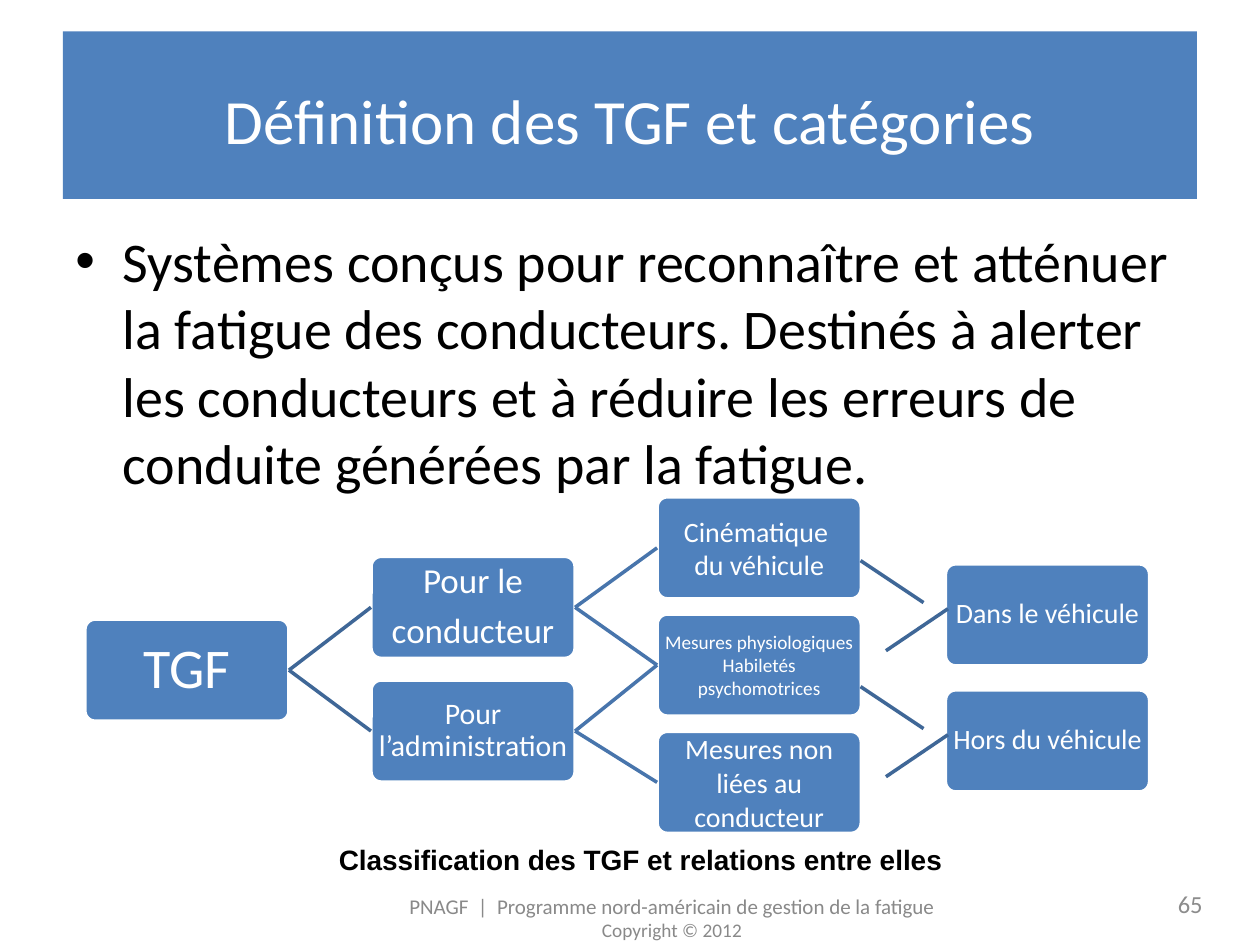
from copy import deepcopy

from lxml import etree
from pptx import Presentation
from pptx.dml.color import RGBColor
from pptx.enum.shapes import MSO_CONNECTOR as Connector, MSO_SHAPE as Preset
from pptx.enum.text import MSO_ANCHOR as Anchor, PP_ALIGN as Align
from pptx.oxml.ns import qn
from pptx.util import Pt

COLORS = {
    "blue": "4F81BD", "dark_link": "3F6797", "link": "4875AC", "white": "FFFFFF",
    "black": "000000", "footer": "898989", "number": "8C8C8C",
}
RIGHT_SIDE, LEFT_SIDE = 3, 1
BOX_WIDTH, BOX_HEIGHT = 116.64, 58.32


def rgb(name):
    return RGBColor.from_string(COLORS[name])


def write(paragraph, text, size, color, font="Calibri", bold=False, align=Align.CENTER):
    """Fill a paragraph; each newline becomes a line break of the same size."""
    paragraph.alignment = align
    for index, line in enumerate(text.split("\n")):
        if index:
            paragraph.add_line_break()
            paragraph._p[-1].append(deepcopy(run._r.rPr))
        run = paragraph.add_run()
        run.text = line
        run.font.name = font
        run.font.size = Pt(size)
        run.font.bold = bold
        run.font.color.rgb = rgb(color)


def add_text_box(slide, box, anchor=Anchor.MIDDLE, wrap=True):
    frame = slide.shapes.add_textbox(*map(Pt, box)).text_frame
    frame.word_wrap = wrap
    frame.vertical_anchor = anchor
    return frame


def add_title(slide, box):
    left, top, width, height = box
    banner = slide.shapes.add_shape(Preset.RECTANGLE, *map(Pt, box))
    banner.shadow.inherit = False
    banner.fill.solid()
    banner.fill.fore_color.rgb = rgb("blue")
    banner.line.fill.background()
    frame = add_text_box(slide, (left, top + 3.6, width, height - 5.76))
    paragraph = frame.paragraphs[0]
    paragraph.line_spacing = Pt(45.8)
    write(paragraph, "Définition des TGF et catégories", 36, "white")


def add_body(slide, box):
    paragraph = add_text_box(slide, box, Anchor.TOP).paragraphs[0]
    paragraph.space_before = Pt(2)
    write(paragraph, "Systèmes conçus pour reconnaître et atténuer\n"
          "la fatigue des conducteurs. Destinés à alerter les conducteurs et à "
          "réduire les erreurs de conduite générées par la fatigue.",
          32, "black", align=Align.LEFT)
    # Hanging bullet
    properties = paragraph._p.get_or_add_pPr()
    properties.set("marL", str(Pt(27)))
    properties.set("indent", str(-Pt(27)))
    etree.SubElement(properties, qn("a:buFont")).set("typeface", "Arial")
    etree.SubElement(properties, qn("a:buChar")).set("char", "•")


def add_node(slide, left, top, lines, size, spacing=0.9):
    node = slide.shapes.add_shape(
        Preset.ROUNDED_RECTANGLE, Pt(left), Pt(top), Pt(BOX_WIDTH), Pt(BOX_HEIGHT))
    node.adjustments[0] = 0.1
    node.shadow.inherit = False
    node.fill.solid()
    node.fill.fore_color.rgb = rgb("blue")
    node.line.color.rgb = rgb("white")
    node.line.width = Pt(2)
    frame = node.text_frame
    frame.word_wrap = True
    frame.vertical_anchor = Anchor.MIDDLE
    frame.margin_left = frame.margin_right = 0
    frame.margin_top = frame.margin_bottom = Pt(0.72)
    for index, line in enumerate(lines):
        paragraph = frame.add_paragraph() if index else frame.paragraphs[0]
        paragraph.line_spacing = spacing
        if spacing < 1 and index < len(lines) - 1:
            paragraph.space_after = Pt(0.35 * size)
        write(paragraph, line, size, "white")
    return node


def add_line(slide, color, start=(0, 0), end=(0, 0)):
    line = slide.shapes.add_connector(Connector.STRAIGHT, *map(Pt, (*start, *end)))
    line.line.color.rgb = rgb(color)
    line.line.width = Pt(2)
    etree.SubElement(line._element.spPr, qn("a:effectLst"))
    return line


def link(slide, parent, child, color):
    line = add_line(slide, color)
    line.begin_connect(parent, RIGHT_SIDE)
    line.end_connect(child, LEFT_SIDE)


def add_diagram(slide, left, top):
    columns = [left + offset for offset in (0, 163.5, 327, 491.75)]

    # Boxes, column by column
    root = add_node(slide, columns[0], top + 69.9, ["TGF"], 32)
    driver = add_node(slide, columns[1], top + 34, ["Pour le", "conducteur"], 20)
    office = add_node(slide, columns[1], top + 104.7, ["Pour l’administration"], 17)
    measures = [
        (["Cinématique \ndu véhicule"], 16),
        (["Mesures physiologiques Habiletés psychomotrices"], 11),
        (["Mesures non", "liées au conducteur"], 16),
    ]
    kinematics, physiology, unrelated = [
        add_node(slide, columns[2], top + 67 * row, lines, size, 1.0)
        for row, (lines, size) in enumerate(measures)]
    for row, label in enumerate(("Dans le véhicule", "Hors du véhicule")):
        box_top = top + 38.3 + 72 * row
        add_node(slide, columns[3], box_top, [label], 16)
        # Short loose lines between the last two columns
        middle = box_top + BOX_HEIGHT / 2
        edge = columns[3]
        add_line(slide, "dark_link", (edge - 48.5, middle - 31), (edge - 12.5, middle - 7))
        add_line(slide, "dark_link", (edge + 1.5, middle - 3.5), (edge - 34, middle + 20.5))

    # Tree links
    for child in (driver, office):
        link(slide, root, child, "dark_link")
    for parent, child in ((driver, kinematics), (driver, physiology),
                          (office, physiology), (office, unrelated)):
        link(slide, parent, child, "link")


def add_caption(slide, box):
    frame = add_text_box(slide, box, Anchor.TOP, wrap=False)
    write(frame.paragraphs[0], "Classification des TGF et relations entre elles",
          16, "black", "Arial", True, Align.LEFT)


def add_footer(slide, footer_box, number_box):
    frame = add_text_box(slide, footer_box)
    write(frame.paragraphs[0],
          "PNAGF  |  Programme nord-américain de gestion de la fatigue", 12, "footer")
    write(frame.add_paragraph(), "Copyright © 2012", 11, "footer")
    number = add_text_box(slide, number_box)
    write(number.paragraphs[0], "65", 14, "number", align=Align.RIGHT)


def main():
    presentation = Presentation()
    presentation.slide_width, presentation.slide_height = Pt(720), Pt(540)
    slide = presentation.slides.add_slide(presentation.slide_layouts[6])
    add_title(slide, (36, 18, 648, 95.76))
    add_body(slide, (36, 126, 648, 356.4))
    add_diagram(slide, 48.5, 283.9)
    add_caption(slide, (186.5, 478, 373, 26.64))
    add_footer(slide, (216, 510.5, 336, 27.36), (526.3, 501.8, 168, 28.8))
    presentation.save("out.pptx")


if __name__ == "__main__":
    main()
